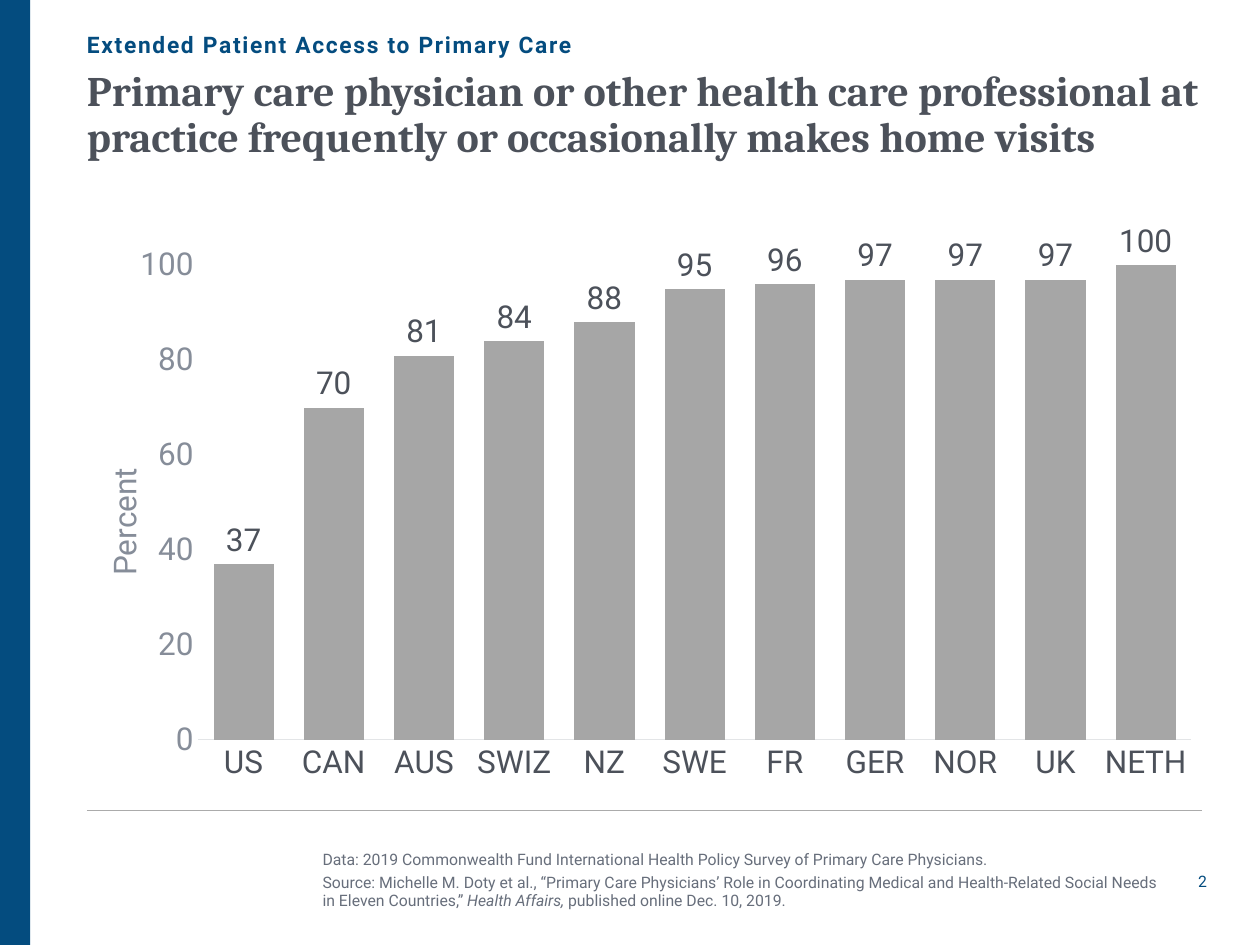
"""Build a slide with a column chart of home visits by primary care practices in eleven countries."""
from lxml import etree
from pptx import Presentation
from pptx.chart.data import CategoryChartData
from pptx.dml.color import RGBColor
from pptx.enum import chart as ch, shapes, text
from pptx.oxml.ns import qn
from pptx.util import Pt

THEME = {
    "blue": "044C7F", "ink": "4C515A", "note": "676E7B", "axis": "868D99",
    "bar": "A6A6A6", "rule": "ABABAB", "baseline": "E3E5E7",
    "serif": "Cambria", "sans": "Roboto",
    "title": 24, "chart": 18, "kicker": 13, "small": 9,
}
LEFT, WIDTH = 49.7, 637.2


def style(font, color, size, name="sans", **extra):
    """Apply theme colour, size and face to a font."""
    values = {"name": THEME[name], "size": Pt(THEME[size]), **extra}
    for key, value in values.items():
        setattr(font, key, value)
    font.color.rgb = RGBColor.from_string(THEME[color])


def place(parent, **values):
    """Give a chart part a manual layout as fractions of the chart."""
    layout = parent.find(qn("c:layout"))
    if layout is None:
        layout = etree.Element(qn("c:layout"))
        parent.insert(0, layout)
    manual = etree.SubElement(layout, qn("c:manualLayout"))
    for key, value in values.items():
        etree.SubElement(manual, qn(f"c:{key}")).set("val", str(value))


prs = Presentation()
prs.slide_width, prs.slide_height = Pt(720), Pt(540)
s = prs.slides.add_slide(prs.slide_layouts[5])

band = s.shapes.add_shape(shapes.MSO_SHAPE.RECTANGLE, 0, 0, Pt(17.3), Pt(540))
band.shadow.inherit = False
band.fill.solid()
band.fill.fore_color.rgb = RGBColor.from_string(THEME["blue"])
band.line.fill.background()

rule = s.shapes.add_connector(
    shapes.MSO_CONNECTOR.STRAIGHT, Pt(LEFT), Pt(463), Pt(LEFT + WIDTH), Pt(463))
rule.line.width = Pt(0.75)
rule.line.color.rgb = RGBColor.from_string(THEME["rule"])
etree.SubElement(rule._element.spPr, qn("a:effectLst"))

data = CategoryChartData(number_format="0")
data.categories = ["US", "CAN", "AUS", "SWIZ", "NZ", "SWE", "FR", "GER", "NOR", "UK", "NETH"]
data.add_series("Series 1", [37, 70, 81, 84, 88, 95, 96, 97, 97, 97, 100])
chart = s.shapes.add_chart(
    ch.XL_CHART_TYPE.COLUMN_CLUSTERED, Pt(LEFT), Pt(125.3), Pt(WIDTH), Pt(330.5), data).chart
chart.has_legend = chart.has_title = False
style(chart.font, "ink", "chart")
place(chart._chartSpace.chart.plotArea, layoutTarget="inner", xMode="edge", yMode="edge",
      x=0.1, y=0.08, w=0.89, h=0.82)

plot = chart.plots[0]
plot.gap_width, plot.overlap, plot.vary_by_categories = 50, -27, False
bars = plot.series[0].format.fill
bars.solid()
bars.fore_color.rgb = RGBColor.from_string(THEME["bar"])
plot.has_data_labels = True
labels = plot.data_labels
label_format = {"show_value": True, "number_format": "0", "number_format_is_linked": False,
                "position": ch.XL_LABEL_POSITION.OUTSIDE_END}
for key, value in label_format.items():
    setattr(labels, key, value)
style(labels.font, "ink", "chart")

for axis, color in ((chart.category_axis, "ink"), (chart.value_axis, "axis")):
    axis.major_tick_mark = axis.minor_tick_mark = ch.XL_TICK_MARK.NONE
    axis.has_major_gridlines = False
    style(axis.tick_labels.font, color, "chart")
baseline = chart.category_axis.format.line
baseline.width = Pt(0.75)
baseline.color.rgb = RGBColor.from_string(THEME["baseline"])

percent = chart.value_axis
percent.minimum_scale, percent.maximum_scale, percent.major_unit = 0, 100, 20
percent.tick_labels.number_format = "#,##0"
percent.tick_labels.number_format_is_linked = False
percent.format.line.fill.background()
tf = percent.axis_title.text_frame
tf.text = "Percent"
tf._txBody.bodyPr.set("rot", "-5400000")
tf._txBody.bodyPr.set("vert", "horz")
style(tf.paragraphs[0].runs[0].font, "axis", "chart", bold=False)
place(percent.axis_title._element, xMode="edge", yMode="edge", x=0.01, y=0.42)

plain, italic = {"italic": False}, {"italic": True}
blocks = [
    (s.shapes.title, (LEFT, 40.3, WIDTH, 93.6), "TOP", "LEFT", ("ink", "title", "serif"), [
        [("Primary care physician or other health care professional at practice "
          "frequently or occasionally makes home visits", {"bold": True})]]),
    (None, (LEFT, 13.7, WIDTH, 19.4), "BOTTOM", "LEFT", ("blue", "kicker"), [
        [("Extended Patient Access to Primary Care", {"bold": True})]]),
    (None, (184.3, 472.3, 483.1, 61.2), "MIDDLE", "LEFT", ("note", "small"), [
        [("Data: 2019 Commonwealth Fund International Health Policy Survey of "
          "Primary Care Physicians.", plain)],
        [("Source: Michelle M. Doty et al., “Primary Care Physicians’ Role in Coordinating "
          "Medical and Health-Related Social Needs in Eleven Countries,” ", plain),
         ("Health Affairs,", italic), (" published online Dec. 10, 2019.", plain)]]),
    (None, (667.4, 495.4, 22.3, 15.8), "MIDDLE", "RIGHT", ("blue", "small"), [[("2", {})]]),
]
for sp, box, anchor, align, look, paragraphs in blocks:
    sp = sp or s.shapes.add_textbox(0, 0, 0, 0)
    for key, value in zip(("left", "top", "width", "height"), box):
        setattr(sp, key, Pt(value))
    tf = sp.text_frame
    frame = {"word_wrap": True, "auto_size": text.MSO_AUTO_SIZE.NONE,
             "vertical_anchor": text.MSO_ANCHOR[anchor],
             **{f"margin_{side}": 0 for side in ("left", "top", "right", "bottom")}}
    for key, value in frame.items():
        setattr(tf, key, value)
    for i, runs in enumerate(paragraphs):
        p = tf.add_paragraph() if i else tf.paragraphs[0]
        p.alignment = text.PP_ALIGN[align]
        p.space_before = Pt(1.8 if i else 0)
        p.line_spacing = 0.9 if "title" in look else 1.0
        for words, extra in runs:
            r = p.add_run()
            r.text = words
            style(r.font, *look, **extra)
            if "kicker" in look:
                r.font._element.set("spc", "100")

prs.save("out.pptx")
